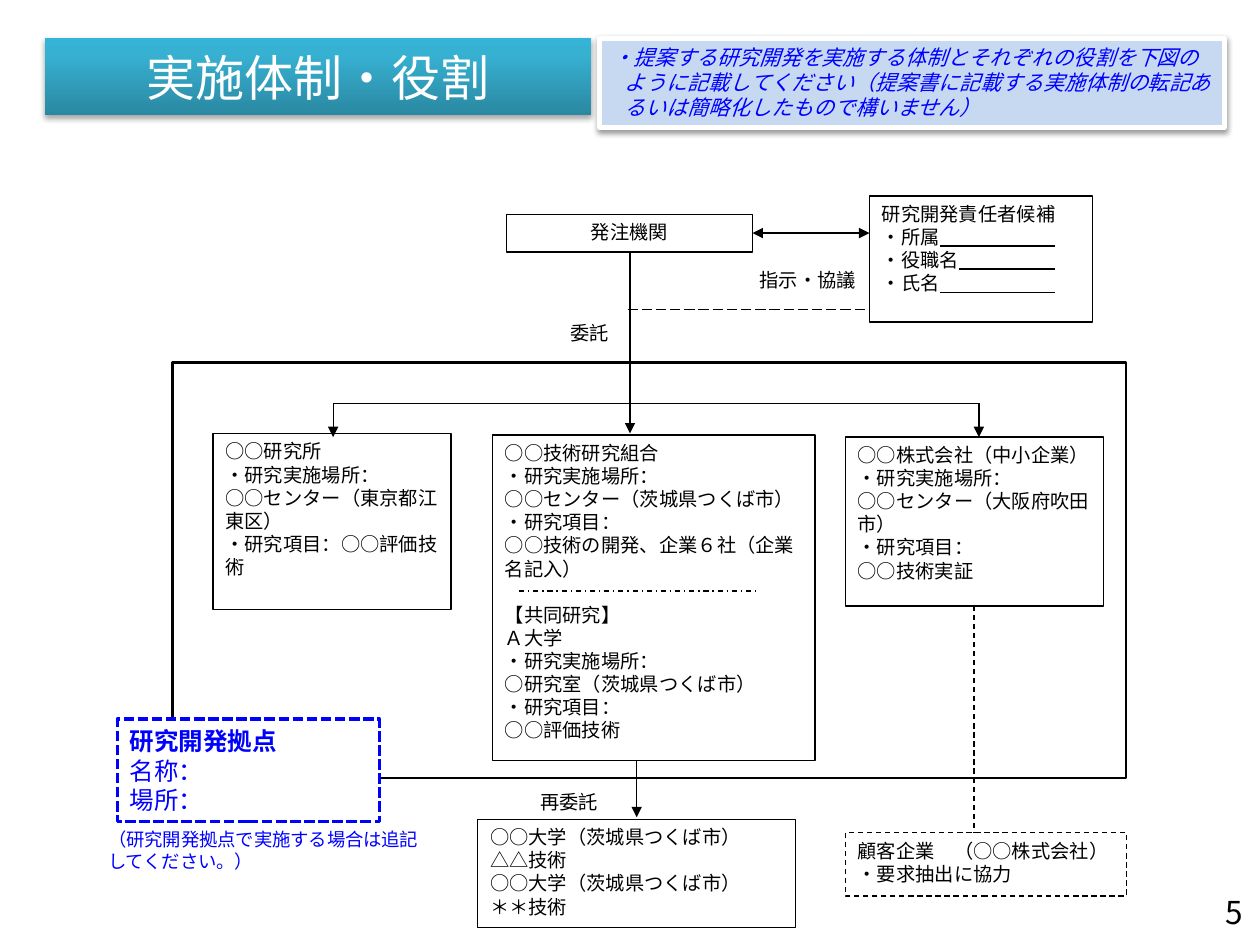
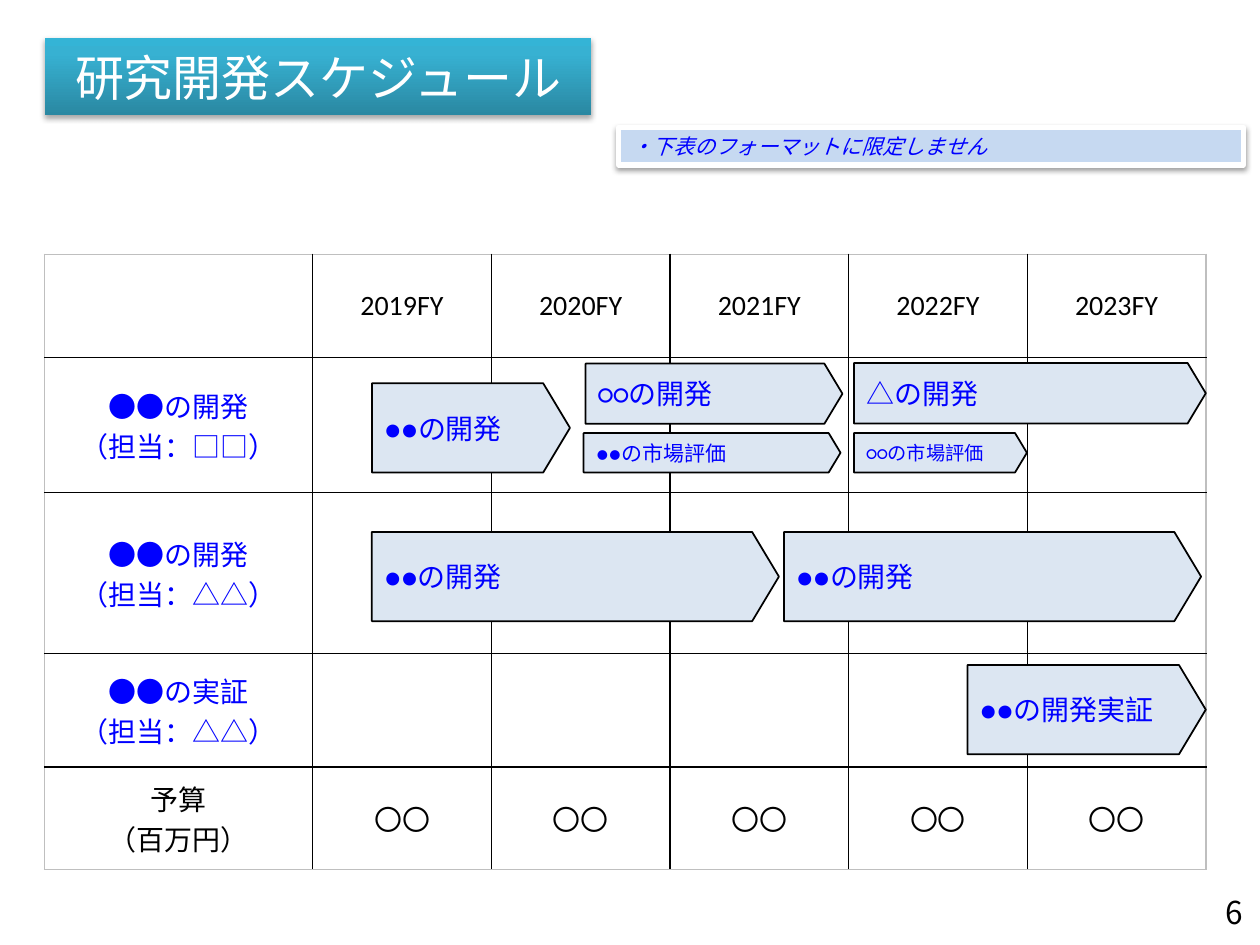
import copy
from dataclasses import dataclass

import lxml.etree
import pptx
import pptx.dml.color
import pptx.enum.dml
import pptx.enum.shapes
import pptx.enum.text
import pptx.oxml.ns
import pptx.util

Pt = pptx.util.Pt
qn = pptx.oxml.ns.qn
SHAPE = pptx.enum.shapes.MSO_SHAPE
DASH = pptx.enum.dml.MSO_LINE
ALIGN = pptx.enum.text.PP_ALIGN
ANCHOR = pptx.enum.text.MSO_ANCHOR


@dataclass(frozen=True)
class Theme:
    latin: str = "Calibri"
    jp: str = "Noto Sans CJK JP"
    serif: str = "TeX Gyre Schola"
    black: str = "000000"
    white: str = "FFFFFF"
    blue: str = "0000FF"
    hint: str = "C6D9F1"
    bar: str = "DCE6F2"
    table_edge: str = "BFBFBF"
    band: tuple = ((0, "2A88A2"), (0.8, "37B1D2"), (1, "34B4D6"))
    title: float = 28
    page: float = 18
    table: float = 16
    site: float = 14
    note: float = 12
    body: float = 11
    caption: float = 10.5
    leading: float = 1.2


T = Theme()


def rgb(value):
    return pptx.dml.color.RGBColor.from_string(value)


# ---- Text ----

def add_run(p, text, size, font, color, bold=False, italic=False):
    r = p.add_run()
    r.text = text
    r.font.size, r.font.name = Pt(size), font
    r.font.color.rgb = rgb(color)
    r.font.bold, r.font.italic = bold, italic
    ea = lxml.etree.SubElement(r.font._element, qn("a:ea"))
    ea.set("typeface", font)
    return r


def write(tf, lines, size=T.body, font=T.jp, color=T.black, align=ALIGN.LEFT,
          leading=None, hanging=0, italic=False):
    """Write one paragraph per line and return the paragraphs."""
    for i, line in enumerate(lines):
        p = tf.paragraphs[0] if i == 0 else tf.add_paragraph()
        p.alignment = align
        if leading:
            p.line_spacing = Pt(size * leading)
        if hanging:
            pPr = p._p.get_or_add_pPr()
            pPr.set("marL", str(Pt(hanging)))
            pPr.set("indent", str(-Pt(hanging)))
        add_run(p, line, size, font, color, italic=italic)
    return tf.paragraphs


def add_label(slide, at, lines, wrap=True, **style):
    s = slide.shapes.add_textbox(*map(Pt, at))
    s.text_frame.word_wrap = wrap
    write(s.text_frame, lines, **style)
    return s


# ---- Shapes and lines ----

def add_panel(slide, at, kind=SHAPE.RECTANGLE, fill=T.white, line=T.black,
              weight=0.75, dash=None, anchor=ANCHOR.TOP):
    s = slide.shapes.add_shape(kind, *map(Pt, at))
    s.shadow.inherit = False
    if fill:
        s.fill.solid()
        s.fill.fore_color.rgb = rgb(fill)
    else:
        s.fill.background()
    if line:
        s.line.color.rgb = rgb(line)
        s.line.width = Pt(weight)
        if dash:
            s.line.dash_style = dash
    else:
        s.line.fill.background()
    s.text_frame.word_wrap = True
    s.text_frame.vertical_anchor = anchor
    return s


def add_box(slide, at, lines, align=ALIGN.LEFT, dash=None):
    s = add_panel(slide, at, dash=dash)
    return write(s.text_frame, lines, align=align, leading=T.leading)


def add_line(slide, x1, y1, x2, y2, dash=None, head=False, tail=False):
    c = slide.shapes.add_connector(
        pptx.enum.shapes.MSO_CONNECTOR.STRAIGHT, *map(Pt, (x1, y1, x2, y2)))
    c.line.color.rgb = rgb(T.black)
    c.line.width = Pt(0.75)
    if dash:
        c.line.dash_style = dash
    ln = c.line._get_or_add_ln()
    for tag, wanted in (("a:headEnd", head), ("a:tailEnd", tail)):
        if wanted:
            lxml.etree.SubElement(ln, qn(tag)).set("type", "triangle")
    lxml.etree.SubElement(c._element.spPr, qn("a:effectLst"))


def drop_shadow(s, opacity, distance):
    effects = s._element.spPr.find(qn("a:effectLst"))
    shadow = lxml.etree.SubElement(
        effects, qn("a:outerShdw"), blurRad=str(Pt(3.1)),
        dist=str(Pt(distance)), dir="5400000", rotWithShape="0")
    color = lxml.etree.SubElement(shadow, qn("a:srgbClr"), val=T.black)
    lxml.etree.SubElement(color, qn("a:alpha"), val=str(opacity * 1000))


# ---- Shared slide parts ----

def add_title(slide, text):
    s = add_panel(slide, (25.5, 21.8, 312.5, 44), line=None, anchor=ANCHOR.MIDDLE)
    s.fill.gradient()
    s.fill.gradient_angle = 90
    stops = s._element.spPr.find(".//" + qn("a:gsLst"))
    stops.insert(1, copy.deepcopy(stops[0]))
    for stop, (position, color) in zip(s.fill.gradient_stops, T.band):
        stop.position = position
        stop.color.rgb = rgb(color)
    drop_shadow(s, 35, 1.8)
    write(s.text_frame, [text], T.title, T.latin, T.white, ALIGN.CENTER)


def add_hint(slide, left, top, height, text):
    s = add_panel(slide, (left, top, 357, height), fill=T.hint, line=T.white, weight=3)
    drop_shadow(s, 38, 1.6)
    write(s.text_frame, [text], T.note, T.latin, T.blue, hanging=7.2, italic=True)


def add_page_number(slide, number):
    s = add_label(slide, (669, 512, 41.5, 18), [str(number)], wrap=False,
                  size=T.page, align=ALIGN.RIGHT)
    tf = s.text_frame
    tf.margin_left = tf.margin_right = tf.margin_top = tf.margin_bottom = 0
    tf.vertical_anchor = ANCHOR.MIDDLE


def new_slide(prs, title, number):
    slide = prs.slides.add_slide(prs.slide_layouts[6])
    add_title(slide, title)
    add_page_number(slide, number)
    return slide


# ---- Schedule parts ----

def set_borders(cell, edges):
    tcPr = cell._tc.get_or_add_tcPr()
    for side, color in edges.items():
        ln = lxml.etree.SubElement(tcPr, qn("a:ln" + side), w=str(Pt(1)))
        fill = lxml.etree.SubElement(ln, qn("a:solidFill"))
        lxml.etree.SubElement(fill, qn("a:srgbClr"), val=color)


def add_schedule_table(slide, rows, widths, heights):
    """Each row is a list of (lines, font, colour) cells."""
    last_row, last_col = len(heights) - 1, len(widths) - 1
    table = slide.shapes.add_table(
        len(heights), len(widths), Pt(25.5), Pt(145.4),
        Pt(sum(widths)), Pt(sum(heights))).table
    table.first_row = table.horz_banding = False
    for column, width in zip(table.columns, widths):
        column.width = Pt(width)
    for i, (row, height) in enumerate(zip(rows, heights)):
        table.rows[i].height = Pt(height)
        for j, (lines, font, color) in enumerate(row):
            cell = table.cell(i, j)
            outer = {"L": j == 0, "R": j == last_col, "T": i == 0, "B": i == last_row}
            set_borders(cell, {side: T.table_edge if edge else T.black
                               for side, edge in outer.items()})
            cell.fill.solid()
            cell.fill.fore_color.rgb = rgb(T.white)
            cell.margin_left = cell.margin_right = 0
            cell.margin_top = cell.margin_bottom = 0
            cell.vertical_anchor = ANCHOR.MIDDLE
            write(cell.text_frame, lines, T.table, font, color, ALIGN.CENTER)


def add_bar(slide, text, left, top, width, height, size=T.table):
    s = add_panel(slide, (left, top, width, height), SHAPE.PENTAGON, T.bar,
                  weight=1, anchor=ANCHOR.MIDDLE)
    s.adjustments[0] = 0.3
    write(s.text_frame, [text], size, T.latin, T.blue, hanging=7.2)


# ---- Slides ----

def build_organisation(prs):
    slide = new_slide(prs, "実施体制・役割", 5)
    add_hint(slide, 342.8, 21.8, 51,
             "・提案する研究開発を実施する体制とそれぞれの役割を下図のように記載してください"
             "（提案書に記載する実施体制の転記あるいは簡略化したもので構いません）")

    # Client and project leader, with lines to fill in
    add_box(slide, (289.4, 122.4, 140.6, 21.6), ["発注機関"], ALIGN.CENTER)
    add_box(slide, (496.8, 112, 127.4, 72),
            ["研究開発責任者候補", "・所属", "・役職名", "・氏名"])
    for i, start in enumerate((537, 548, 537)):
        y = 140.6 + i * T.body * T.leading
        add_line(slide, start, y, 603, y)

    # Members inside the project frame
    add_panel(slide, (98.6, 207.2, 545, 237.4), fill=None, weight=1.5)
    add_box(slide, (121.7, 247.7, 136, 100.6),
            ["○○研究所", "・研究実施場所：", "○○センター（東京都江東区）",
             "・研究項目：○○評価技術"])
    union = add_box(slide, (281.4, 248.6, 184.4, 185.8),
                    ["○○技術研究組合", "・研究実施場所：", "○○センター（茨城県つくば市）",
                     "・研究項目：", "○○技術の開発、企業６社（企業名記入）",
                     "【共同研究】", "Ａ大学", "・研究実施場所：",
                     "○研究室（茨城県つくば市）", "・研究項目：", "○○評価技術"])
    union[5].space_before = Pt(T.body * T.leading)
    union[5].runs[0].font.name = T.serif
    add_box(slide, (483, 249.8, 147.6, 96.5),
            ["○○株式会社（中小企業）", "・研究実施場所：", "○○センター（大阪府吹田市）",
             "・研究項目：", "○○技術実証"])

    # Subcontractors and customer
    add_box(slide, (273, 468.2, 181.6, 61.8),
            ["○○大学（茨城県つくば市）", "△△技術", "○○大学（茨城県つくば市）", "＊＊技術"])
    add_box(slide, (483, 475.8, 160.6, 36.2),
            ["顧客企業　（○○株式会社）", "・要求抽出に協力"], dash=DASH.DASH)

    # Links
    add_line(slide, 296.6, 337.8, 433.4, 337.8, dash=DASH.DASH_DOT)
    add_line(slide, 363.8, 434.4, 363.8, 467, tail=True)
    add_line(slide, 360, 143.3, 360, 247.7, tail=True)
    add_line(slide, 190.4, 230.4, 559.4, 230.4)
    for x in (190.4, 559.4):
        add_line(slide, x, 230.4, x, 249.8, tail=True)
    add_line(slide, 430, 133.2, 496.8, 133.2, head=True, tail=True)
    add_line(slide, 358.6, 177, 495.4, 177, dash=DASH.LONG_DASH)
    add_line(slide, 556.6, 346.3, 556.6, 475.8, dash=DASH.DASH)
    add_label(slide, (427, 149.8, 73.4, 23.8), ["指示・協議"], leading=T.leading)
    add_label(slide, (319, 180, 36.7, 20.9), ["委託"], wrap=False, font=T.latin)
    add_label(slide, (301.7, 447.8, 47.5, 20.9), ["再委託"], wrap=False, font=T.latin)

    # Research site
    site = add_panel(slide, (67, 411, 149.8, 58.4), line=T.blue, weight=2,
                     dash=DASH.SQUARE_DOT, anchor=ANCHOR.MIDDLE)
    lines = write(site.text_frame, ["研究開発拠点", "名称：", "場所："], T.site,
                  T.serif, T.blue, leading=T.leading)
    lines[0].runs[0].font.bold = True
    add_label(slide, (54.7, 469.4, 193, 32.4),
              ["（研究開発拠点で実施する場合は追記してください。）"],
              size=T.caption, color=T.blue, leading=T.leading)


def build_schedule(prs):
    slide = new_slide(prs, "研究開発スケジュール", 6)
    years = range(2019, 2024)
    empty = ([], T.jp, T.black)
    tasks = [("●●の開発", "（担当：□□）"), ("●●の開発", "（担当：△△）"),
             ("●●の実証", "（担当：△△）")]
    rows = [[empty] + [([f"{year}FY"], T.latin, T.black) for year in years]]
    rows += [[(task, T.jp, T.blue)] + [empty] * len(years) for task in tasks]
    rows.append([(("予算", "（百万円）"), T.jp, T.black)]
                + [(["〇〇"], T.jp, T.black)] * len(years))
    add_schedule_table(slide, rows, [153.2] + [102.1] * len(years),
                       [58.8, 77.4, 92, 64.8, 58.4])
    add_hint(slide, 353.6, 72.8, 21.6, "・下表のフォーマットに限定しません")

    # Task bars
    add_bar(slide, "●●の開発", 212.5, 219, 113.2, 51)
    add_bar(slide, "○○の開発", 334.6, 207.8, 146.8, 34.4)
    add_bar(slide, "△の開発", 488, 207.4, 201, 34.6)
    add_bar(slide, "●●の市場評価", 333.5, 247.5, 146.8, 22.5, T.note)
    add_bar(slide, "○○の市場評価", 488, 247.5, 98.8, 22.5, T.body)
    add_bar(slide, "●●の開発", 212.5, 304, 232.6, 51)
    add_bar(slide, "●●の開発", 448, 304, 238.4, 51)
    add_bar(slide, "●●の開発実証", 552.8, 380, 136.2, 51)


def main():
    prs = pptx.Presentation()
    prs.slide_width, prs.slide_height = Pt(720), Pt(540)
    build_organisation(prs)
    build_schedule(prs)
    prs.save("out.pptx")


if __name__ == "__main__":
    main()
